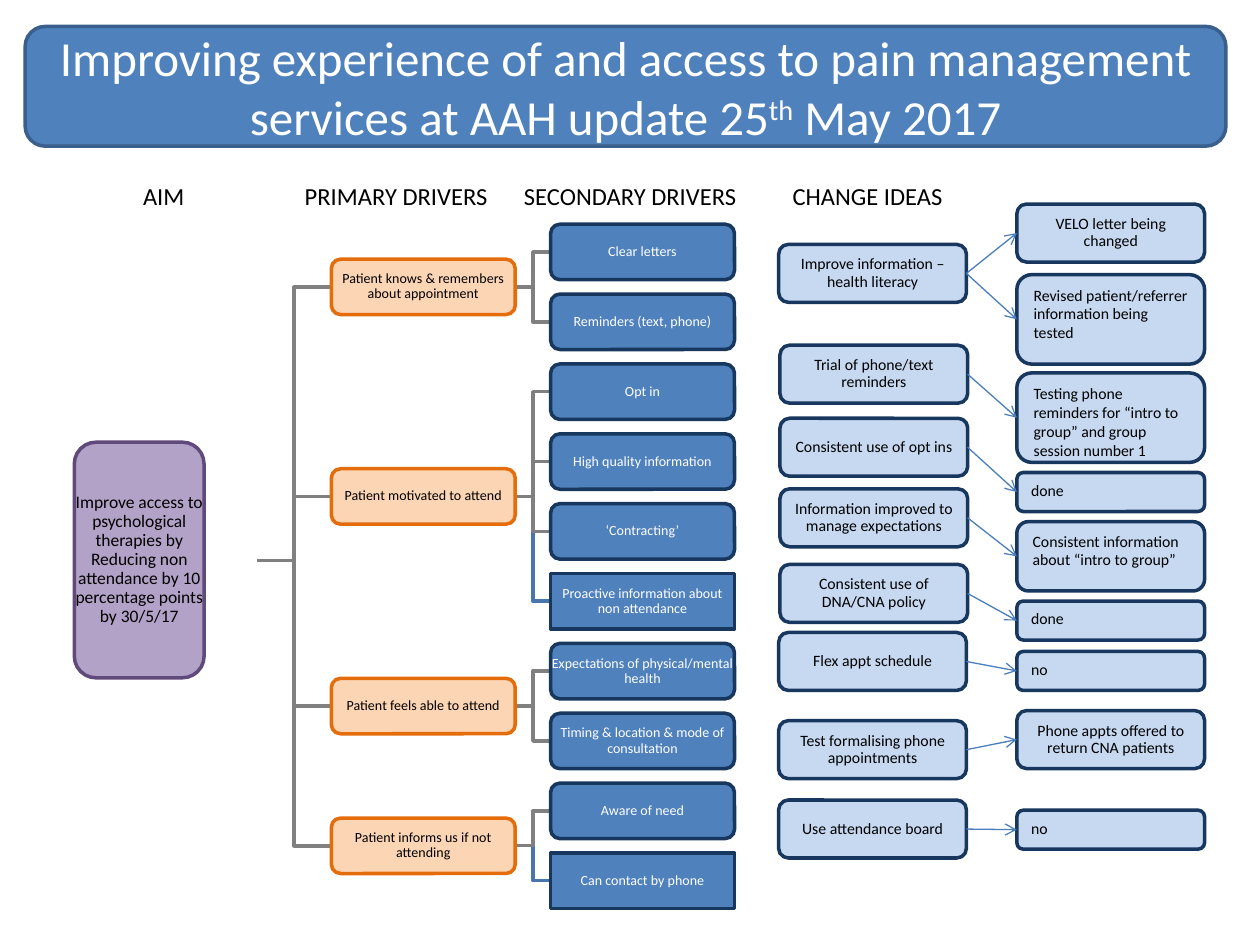
from lxml import etree
from pptx import Presentation
from pptx.dml.color import RGBColor
from pptx.enum import shapes, text
from pptx.oxml.ns import qn
from pptx.util import Inches, Pt

FONT = "Calibri"
BLACK, WHITE, GREY = "000000", "FFFFFF", "808080"
BLUE, NAVY, PALE = "4F81BD", "17375E", "C6D9F1"
LATE_BLUE, ARROW_BLUE = "4875AC", "4B7EBC"
ROUND, SQUARE = shapes.MSO_SHAPE.ROUNDED_RECTANGLE, shapes.MSO_SHAPE.RECTANGLE
LEFT, CENTER = text.PP_ALIGN.LEFT, text.PP_ALIGN.CENTER
TOP, MIDDLE = text.MSO_ANCHOR.TOP, text.MSO_ANCHOR.MIDDLE

# Primary driver, then its secondary drivers; a True flag marks a later addition
DRIVERS = [
    ("Patient knows & remembers about appointment",
     [("Clear letters", False), ("Reminders (text, phone)", False)]),
    ("Patient motivated to attend",
     [("Opt in", False), ("High quality information", False), ("‘Contracting’", False),
      ("Proactive information about non attendance", True)]),
    ("Patient feels able to attend",
     [("Expectations of physical/mental health", False),
      ("Timing & location & mode of consultation", False)]),
    ("Patient informs us if not attending",
     [("Aware of need", False), ("Can contact by phone", True)]),
]

# Change idea: left, top, label, then its results: top, height, label, centred
IDEAS = [
    (6.18, 1.94, "Improve information – health literacy",
     [(1.62, 0.46, "VELO letter being changed", True),
      (2.18, 0.71, "Revised patient/referrer information being tested", False)]),
    (6.19, 2.74, "Trial of phone/text reminders",
     [(2.96, 0.71, "Testing phone reminders for “intro to group” and group session number 1", False)]),
    (6.19, 3.32, "Consistent use of opt ins", [(3.75, 0.31, "done", False)]),
    (6.19, 3.88, "Information improved to manage expectations",
     [(4.14, 0.55, "Consistent information about “intro to group”", False)]),
    (6.19, 4.48, "Consistent use of DNA/CNA policy", [(4.77, 0.31, "done", False)]),
    (6.18, 5.02, "Flex appt schedule", [(5.17, 0.31, "no", False)]),
    (6.18, 5.72, "Test formalising phone appointments",
     [(5.64, 0.46, "Phone appts offered to return CNA patients", True)]),
    (6.18, 6.35, "Use attendance board", [(6.43, 0.31, "no", False)]),
]


def color(value):
    return RGBColor.from_string(value)


def place(box):
    return [Inches(length) for length in box]


def write(shape, label, size, ink=BLACK, align=CENTER, anchor=MIDDLE, insets=(0.1, 0.05), spacing=1):
    frame = shape.text_frame
    frame.text = label
    frame.word_wrap = True
    frame.vertical_anchor = anchor
    frame.margin_left = frame.margin_right = Inches(insets[0])
    frame.margin_top = frame.margin_bottom = Inches(insets[1])
    para = frame.paragraphs[0]
    para.alignment = align
    para.line_spacing = spacing
    style(para.runs[0], size, ink)


def style(span, size, ink):
    span.font.name = FONT
    span.font.size = Pt(size)
    span.font.color.rgb = color(ink)


def panel(page, box, fill, line, kind=ROUND):
    shape = page.shapes.add_shape(kind, *place(box))
    shape.shadow.inherit = False
    shape.fill.solid()
    shape.fill.fore_color.rgb = color(fill)
    shape.line.color.rgb = color(line)
    shape.line.width = Pt(2)
    return shape


def card(page, box, label, size, fill, line, ink=BLACK, kind=ROUND, pad=0):
    """Panel with a centred label that may use its full width."""
    panel(page, box, fill, line, kind)
    left, top, width, height = box
    area = page.shapes.add_textbox(*place((left + pad, top, width - 2 * pad, height)))
    write(area, label, size, ink, insets=(0, 0.01), spacing=0.9)


def elbow(page, start, end, line):
    (x1, y1), (x2, y2) = start, end
    middle = (x1 + x2) / 2
    builder = page.shapes.build_freeform(Inches(x1), Inches(y1))
    corners = [(middle, y1), (middle, y2), (x2, y2)]
    builder.add_line_segments([place(corner) for corner in corners], close=False)
    shape = builder.convert_to_shape()
    shape.shadow.inherit = False
    shape.fill.background()
    shape.line.color.rgb = color(line)
    shape.line.width = Pt(2)


def arrow(page, start, end):
    line = page.shapes.add_connector(shapes.MSO_CONNECTOR.STRAIGHT, *place(start + end))
    line.line.color.rgb = color(ARROW_BLUE)
    line.line.width = Pt(0.75)
    etree.SubElement(line.line._get_or_add_ln(), qn("a:tailEnd"), type="arrow")
    etree.SubElement(line._element.spPr, qn("a:effectLst"))


def title(page, box):
    banner = panel(page, box, BLUE, "3A5F8C")
    write(banner, "Improving experience of and access to pain management services at AAH update 25", 28, WHITE)
    para = banner.text_frame.paragraphs[0]
    for words in ("th", " May 2017"):
        span = para.add_run()
        span.text = words
        style(span, 28, WHITE)
    para.runs[1].font._element.set("baseline", "30000")


def headings(page, top):
    for left, width, label, align in [
        (0.75, 1.1, "AIM", CENTER), (2.32, 1.89, "PRIMARY DRIVERS", LEFT),
        (4.06, 1.89, "SECONDARY DRIVERS", LEFT), (5.94, 1.89, "CHANGE IDEAS", CENTER),
    ]:
        area = page.shapes.add_textbox(*place((left, top, width, 0.35)))
        write(area, label, 14, align=align, anchor=TOP)


def driver_tree(page, box):
    left, top, width, height = box
    card_width, card_height, rows = 1.46, 0.44, 10
    step = (height - card_height) / (rows - 1)
    primary_x, secondary_x = left + 2.04, left + width - card_width
    root = (left + 1.45, 4.45)

    # Row centres, each primary driver midway along its group
    groups, row = [], 0
    for label, children in DRIVERS:
        centers = [top + card_height / 2 + step * (row + i) for i in range(len(children))]
        groups.append((label, (centers[0] + centers[-1]) / 2, list(zip(children, centers))))
        row += len(children)

    # Branches lie behind the cards, later additions lowest
    for _, middle, children in reversed(groups):
        for (_, late), center in reversed(children):
            elbow(page, (primary_x + card_width, middle), (secondary_x, center),
                  LATE_BLUE if late else GREY)
        elbow(page, root, (primary_x, middle), GREY)

    card(page, (left, 3.51, 1.03, 1.87),
         "Improve access to psychological therapies by Reducing non attendance "
         "by 10 percentage points by 30/5/17", 10, "B3A2C7", "604A7B")
    for label, middle, children in groups:
        card(page, (primary_x, middle - card_height / 2, card_width, card_height),
             label, 8, "FCD5B5", "E46C0A")
        for (words, late), center in children:
            card(page, (secondary_x, center - card_height / 2, card_width, card_height),
                 words, 8, BLUE, NAVY, WHITE, SQUARE if late else ROUND)


def change_ideas(page, result_x):
    width, height, pad = 1.49, 0.46, 0.1
    for left, top, label, results in IDEAS:
        card(page, (left, top, width, height), label, 9, PALE, NAVY, pad=pad)
        for result_top, result_height, words, centred in results:
            box = (result_x, result_top, width, result_height)
            if centred:
                card(page, box, words, 9, PALE, NAVY, pad=pad)
            else:
                write(panel(page, box, PALE, NAVY), words, 9, align=LEFT, anchor=TOP)
            arrow(page, (left + width, top + height / 2),
                  (result_x, result_top + result_height / 2))


def main():
    deck = Presentation()
    deck.slide_width, deck.slide_height = Inches(10), Inches(7.5)
    page = deck.slides.add_slide(deck.slide_layouts[6])
    driver_tree(page, (0.59, 1.78, 5.24, 5.43))
    headings(page, 1.39)
    title(page, (0.2, 0.21, 9.53, 0.95))
    change_ideas(page, 8.07)
    deck.save("out.pptx")


if __name__ == "__main__":
    main()
